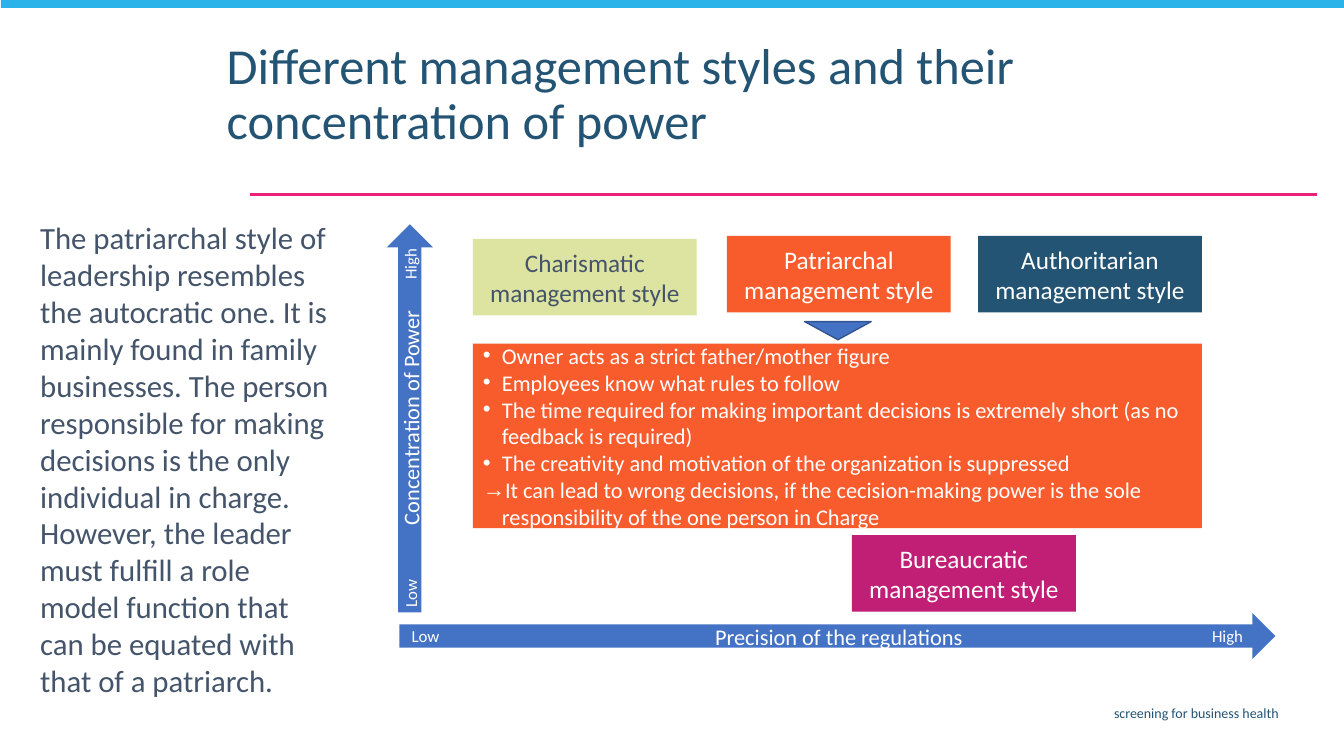
from dataclasses import dataclass

from lxml import etree
from pptx import Presentation
from pptx.dml.color import RGBColor
from pptx.enum.shapes import MSO_CONNECTOR, MSO_SHAPE
from pptx.enum.text import MSO_ANCHOR as ANCHOR, MSO_AUTO_SIZE as AUTO, PP_ALIGN as ALIGN
from pptx.oxml.ns import qn
from pptx.util import Inches, Pt

FONT = "Calibri"
WHITE = RGBColor(0xFF, 0xFF, 0xFF)
SKY = RGBColor(0x29, 0xB3, 0xE8)
PINK = RGBColor(0xEC, 0x21, 0x79)
NAVY = RGBColor(0x24, 0x54, 0x73)
SLATE = RGBColor(0x44, 0x54, 0x6A)
BLUE = RGBColor(0x44, 0x72, 0xC4)
DARK_BLUE = RGBColor(0x32, 0x54, 0x91)
LIME = RGBColor(0xDD, 0xE3, 0xA0)
ORANGE = RGBColor(0xF9, 0x5C, 0x2C)
MAGENTA = RGBColor(0xC0, 0x1F, 0x75)


@dataclass
class Block:
    """A filled preset shape."""
    kind: MSO_SHAPE
    x: float
    y: float
    w: float
    h: float
    fill: RGBColor
    rot: float = 0


@dataclass
class Label:
    """A text box; axis labels are centred and do not wrap."""
    text: str
    x: float
    y: float
    w: float
    h: float
    size: float
    color: RGBColor = WHITE
    align: ALIGN = ALIGN.CENTER
    rot: float = 0
    wrap: bool = False
    spacing: float = 1.0


@dataclass
class Style:
    """A management style card."""
    name: str
    x: float
    y: float
    fill: RGBColor
    color: RGBColor = WHITE


CARD_W, CARD_H = 2.22, 0.76
STYLES = [
    Style("Charismatic", 4.69, 2.37, LIME, SLATE),
    Style("Patriarchal", 7.21, 2.34, ORANGE),
    Style("Authoritarian", 9.7, 2.34, NAVY),
    Style("Bureaucratic", 8.45, 5.31, MAGENTA),
]

TEXTS = [
    Label("screening for business health", 3.65, 6.94, 9.13, 0.29, 10, NAVY,
          ALIGN.RIGHT, wrap=True),
    Label("Different management styles and their concentration of power",
          2.15, 0.36, 9.92, 1.24, 36, NAVY, ALIGN.LEFT, wrap=True, spacing=0.9),
    Label("The patriarchal style of leadership resembles the autocratic one. "
          "It is mainly found in family businesses. The person responsible for "
          "making decisions is the only individual in charge. However, the "
          "leader must fulfill a role model function that can be equated with "
          "that of a patriarch.",
          0.3, 2.12, 3.07, 4.9, 22, SLATE, ALIGN.LEFT, wrap=True),
]

AXES = [
    Block(MSO_SHAPE.RIGHT_ARROW, 3.96, 6.08, 8.69, 0.46, BLUE),
    Block(MSO_SHAPE.RIGHT_ARROW, 2.14, 3.92, 3.85, 0.46, BLUE, 270),
]
AXIS_LABELS = [
    Label("Precision of the regulations", 6.99, 6.13, 2.66, 0.37, 16),
    Label("Low", 3.98, 6.16, 0.48, 0.3, 12),
    Label("High", 11.92, 6.16, 0.51, 0.3, 12),
    Label("Concentration of Power", 2.9, 3.96, 2.34, 0.37, 16, rot=270),
    Label("Low", 3.83, 5.74, 0.48, 0.3, 12, rot=270),
    Label("High", 3.81, 2.47, 0.51, 0.3, 12, rot=270),
]

TRAITS = [
    ("•", "Owner acts as a strict father/mother figure"),
    ("•", "Employees know what rules to follow"),
    ("•", "The time required for making important decisions is extremely short "
          "(as no feedback is required)"),
    ("•", "The creativity and motivation of the organization is suppressed"),
    ("→", "It can lead to wrong decisions, if the cecision-making power is the "
          "sole responsibility of the one person in Charge"),
]


def add_run(p, text: str, size: float, color: RGBColor) -> None:
    r = p.add_run()
    r.text = text
    r.font.name, r.font.size = FONT, Pt(size)
    r.font.color.rgb = color


def add_block(slide, b: Block):
    sp = slide.shapes.add_shape(b.kind, Inches(b.x), Inches(b.y),
                                Inches(b.w), Inches(b.h))
    sp.shadow.inherit = False
    sp.fill.solid()
    sp.fill.fore_color.rgb = b.fill
    sp.line.fill.background()
    sp.rotation = b.rot
    sp.text_frame.vertical_anchor = ANCHOR.MIDDLE
    return sp


def add_label(slide, t: Label) -> None:
    sp = slide.shapes.add_textbox(Inches(t.x), Inches(t.y), Inches(t.w), Inches(t.h))
    sp.rotation = t.rot
    tf = sp.text_frame
    tf.word_wrap = t.wrap
    if not t.wrap:
        tf.auto_size = AUTO.SHAPE_TO_FIT_TEXT
        tf.vertical_anchor = ANCHOR.MIDDLE
    p = tf.paragraphs[0]
    p.alignment, p.line_spacing = t.align, t.spacing
    add_run(p, t.text, t.size, t.color)


def add_card(slide, s: Style) -> None:
    sp = add_block(slide, Block(MSO_SHAPE.RECTANGLE, s.x, s.y, CARD_W, CARD_H, s.fill))
    p = sp.text_frame.paragraphs[0]
    p.alignment = ALIGN.CENTER
    add_run(p, f"{s.name} management style", 18, s.color)


def set_bullet(p, char: str) -> None:
    pPr = p._p.get_or_add_pPr()
    pPr.set("marL", str(Inches(0.19)))
    pPr.set("indent", str(-Inches(0.19)))
    etree.SubElement(pPr, qn("a:buFont")).set("typeface", "Arial")
    etree.SubElement(pPr, qn("a:buChar")).set("char", char)


def add_traits(slide) -> None:
    sp = add_block(slide, Block(MSO_SHAPE.RECTANGLE, 4.69, 3.41, 7.23, 1.83, ORANGE))
    tf = sp.text_frame
    for i, (char, text) in enumerate(TRAITS):
        p = tf.add_paragraph() if i else tf.paragraphs[0]
        p.alignment = ALIGN.LEFT
        set_bullet(p, char)
        add_run(p, text, 16, WHITE)


def main() -> None:
    prs = Presentation()
    prs.slide_width, prs.slide_height = Inches(13.33), Inches(7.5)
    slide = prs.slides.add_slide(prs.slide_layouts[6])

    # Title rule and top band
    rule = slide.shapes.add_connector(MSO_CONNECTOR.STRAIGHT, Inches(13.06),
                                      Inches(1.93), Inches(2.48), Inches(1.93))
    rule.line.color.rgb, rule.line.width = PINK, Pt(1.5)
    etree.SubElement(rule._element.spPr, qn("a:effectLst"))
    add_block(slide, Block(MSO_SHAPE.RECTANGLE, 0.01, -0.02, 13.34, 0.1, SKY))

    # Footer, title and description
    for text in TEXTS:
        add_label(slide, text)

    # Axes
    for axis in AXES:
        add_block(slide, axis)
    for label in AXIS_LABELS:
        add_label(slide, label)

    # Management styles and the traits of the patriarchal one
    for style in STYLES:
        add_card(slide, style)
    add_traits(slide)
    pointer = add_block(slide, Block(MSO_SHAPE.ISOSCELES_TRIANGLE,
                                     7.98, 3.19, 0.66, 0.18, BLUE, 180))
    pointer.line.color.rgb, pointer.line.width = DARK_BLUE, Pt(1)

    prs.save("out.pptx")


if __name__ == "__main__":
    main()
